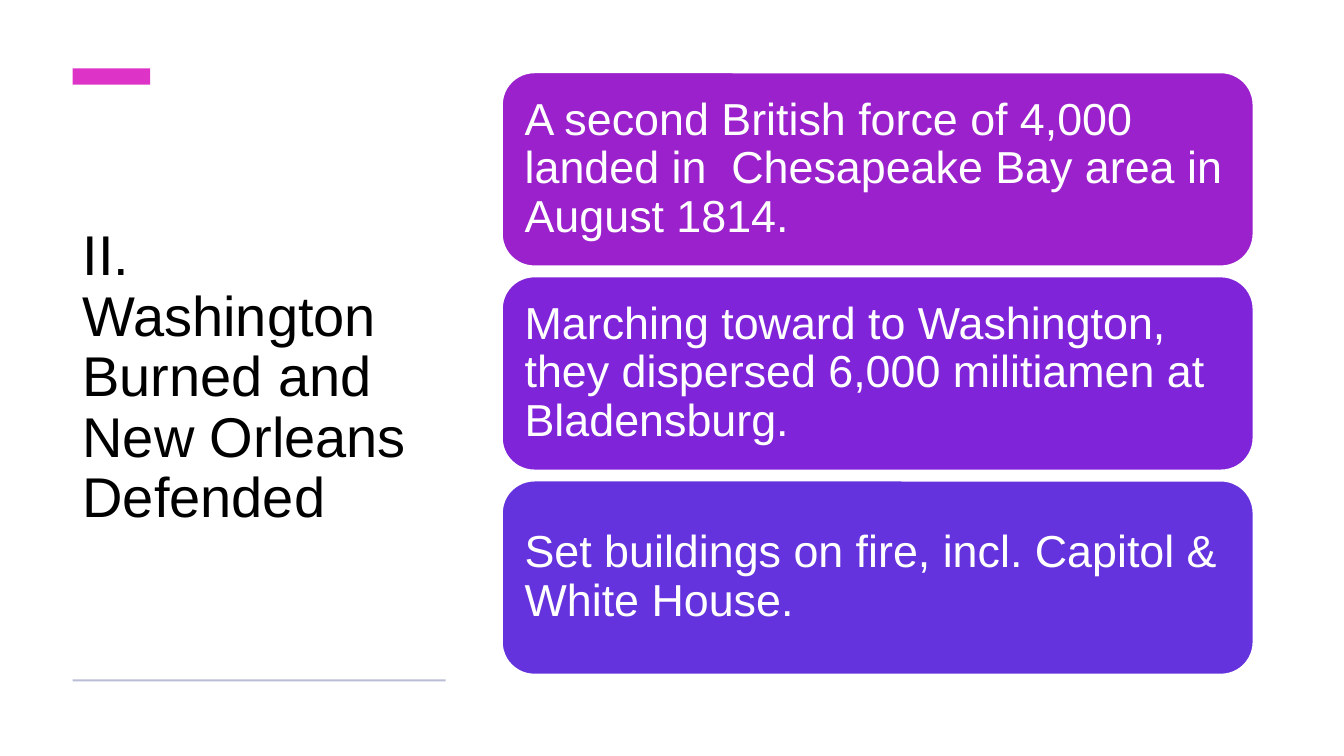
from pptx import Presentation
from pptx.dml.color import RGBColor
from pptx.enum.shapes import MSO_SHAPE as SHAPE
from pptx.enum.text import MSO_ANCHOR, PP_ALIGN
from pptx.util import Inches, Pt

TITLE = "II. Washington Burned and New Orleans Defended"
CARDS = [
    ("A second British force of 4,000 landed in  Chesapeake Bay area in August 1814.", "9A21CB"),
    ("Marching toward to Washington, they dispersed 6,000 militiamen at Bladensburg.", "8024DA"),
    ("Set buildings on fire, incl. Capitol & White House.", "6533DD"),
]
TITLE_LEFT, TITLE_WIDTH = 0.72, 3.7
CARD_LEFT, CARD_TOP, CARD_WIDTH, CARD_HEIGHT = 4.98, 0.72, 7.45, 1.92
CARD_STEP = 2.025


def color(hex_code):
    return RGBColor.from_string(hex_code)


def add_block(s, kind, left, top, width, height, fill, line=None):
    sp = s.shapes.add_shape(kind, Inches(left), Inches(top), Inches(width), Inches(height))
    sp.shadow.inherit = False
    sp.fill.solid()
    sp.fill.fore_color.rgb = color(fill)
    if line:
        sp.line.color.rgb = color(line)
        sp.line.width = Pt(1)
    else:
        sp.line.fill.background()
    return sp


def write(sp, text, size, ink, inset_x=0.1, inset_y=0.05):
    tf = sp.text_frame
    tf.word_wrap = True
    tf.vertical_anchor = MSO_ANCHOR.MIDDLE
    tf.margin_left = tf.margin_right = Inches(inset_x)
    tf.margin_top = tf.margin_bottom = Inches(inset_y)
    p = tf.paragraphs[0]
    p.alignment = PP_ALIGN.LEFT
    p.line_spacing = 0.9
    r = p.add_run()
    r.text = text
    r.font.name = "Arial"
    r.font.size = Pt(size)
    r.font.color.rgb = color(ink)


def main():
    prs = Presentation()
    prs.slide_width, prs.slide_height = Inches(13.33), Inches(7.5)
    s = prs.slides.add_slide(prs.slide_layouts[6])

    title = s.shapes.add_textbox(Inches(TITLE_LEFT), Inches(1.05), Inches(TITLE_WIDTH), Inches(5.41))
    write(title, TITLE, 40, "000000")
    add_block(s, SHAPE.RECTANGLE, TITLE_LEFT, 0.68, 0.77, 0.16, "DD33C7")
    add_block(s, SHAPE.RECTANGLE, TITLE_LEFT, 6.74, TITLE_WIDTH, 0.02, "BABDD7")

    for i, (text, fill) in enumerate(CARDS):
        card = add_block(s, SHAPE.ROUNDED_RECTANGLE, CARD_LEFT, CARD_TOP + i * CARD_STEP,
                         CARD_WIDTH, CARD_HEIGHT, fill, line="FFFFFF")
        write(card, text, 32, "FFFFFF", inset_x=0.13, inset_y=0.13)

    prs.save("out.pptx")


if __name__ == "__main__":
    main()
